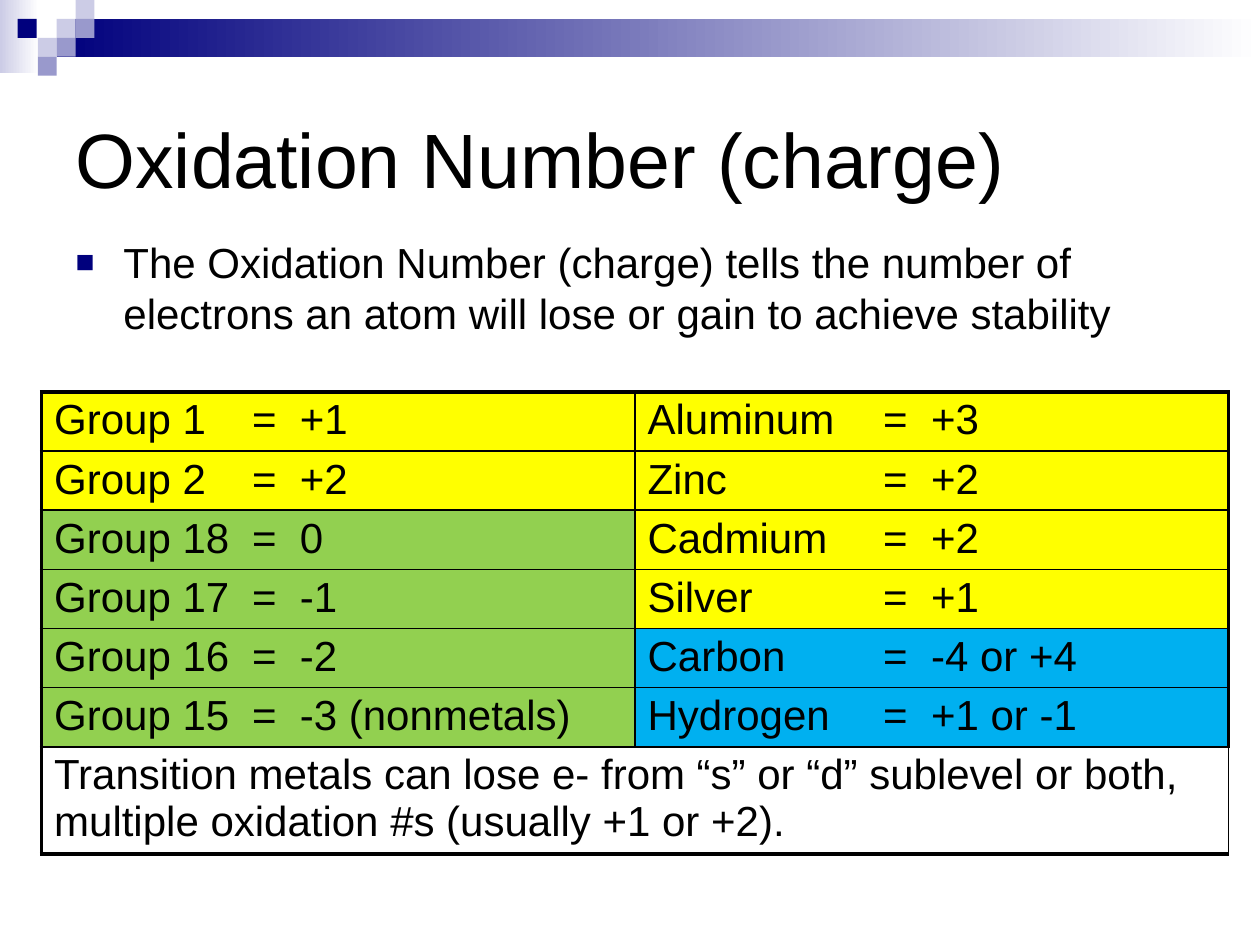
import pptx
import pptx.dml.color
import pptx.enum.shapes
import pptx.enum.text
import pptx.oxml.ns
import pptx.util
from lxml import etree

Inches = pptx.util.Inches
Pt = pptx.util.Pt
RGBColor = pptx.dml.color.RGBColor
qn = pptx.oxml.ns.qn
MSO_ANCHOR = pptx.enum.text.MSO_ANCHOR

BLACK = RGBColor(0x00, 0x00, 0x00)
WHITE = RGBColor(0xFF, 0xFF, 0xFF)
NAVY = RGBColor(0x00, 0x00, 0x7D)
LAVENDER = RGBColor(0xCC, 0xCC, 0xE6)
PERIWINKLE = RGBColor(0x99, 0x99, 0xCC)
YELLOW = RGBColor(0xFF, 0xFF, 0x00)
GREEN = RGBColor(0x92, 0xD0, 0x50)
BLUE = RGBColor(0x00, 0xB0, 0xF0)

SQUARE = 0.15
# Left edge, row on the square grid, colour
SQUARES = [
    (0.45, 1, LAVENDER), (0.6, 0, LAVENDER), (0.6, 1, PERIWINKLE),
    (0.3, 2, LAVENDER), (0.14, 1, NAVY), (0.45, 2, PERIWINKLE),
    (0.3, 3, PERIWINKLE),
]

GROUPS = [
    ("Group 1", "+1", YELLOW), ("Group 2", "+2", YELLOW),
    ("Group 18", "0", GREEN), ("Group 17", "-1", GREEN),
    ("Group 16", "-2", GREEN), ("Group 15", "-3 (nonmetals)", GREEN),
]
ELEMENTS = [
    ("Aluminum", "+3", YELLOW), ("Zinc", "+2", YELLOW),
    ("Cadmium", "+2", YELLOW), ("Silver", "+1", YELLOW),
    ("Carbon", "-4 or +4", BLUE), ("Hydrogen", "+1 or -1", BLUE),
]
# Tab stops of the equals sign and of the charge, for each column
TABS = [(1.57, 1.95), (1.87, 2.25)]
FOOTNOTE = ("Transition metals can lose e- from “s” or “d” sublevel or both, "
            "multiple oxidation #s (usually +1 or +2).")


class SlideBuilder:
    font = "Arial"
    title_size = 44
    text_size = 24
    outer_line = 2.25
    inner_line = 1

    def __init__(self, slide):
        self.s = slide

    def style(self, p, size):
        p.font.name = self.font
        p.font.size = Pt(size)
        p.font.color.rgb = BLACK
        p.alignment = pptx.enum.text.PP_ALIGN.LEFT

    def rect(self, left, top, width, height, color, fade=False):
        """Add a borderless rectangle, fading to white at the right if asked."""
        sp = self.s.shapes.add_shape(
            pptx.enum.shapes.MSO_SHAPE.RECTANGLE,
            Inches(left), Inches(top), Inches(width), Inches(height))
        sp.shadow.inherit = False
        sp.line.fill.background()
        if fade:
            sp.fill.gradient()
            sp.fill.gradient_angle = 0
            for stop, stop_color in zip(sp.fill.gradient_stops, (color, WHITE)):
                stop.color.rgb = stop_color
        else:
            sp.fill.solid()
            sp.fill.fore_color.rgb = color

    def placeholder(self, sp, box, text, size, anchor):
        sp.left, sp.top, sp.width, sp.height = map(Inches, box)
        tf = sp.text_frame
        tf.text = text
        tf.word_wrap = True
        tf.auto_size = pptx.enum.text.MSO_AUTO_SIZE.NONE
        tf.vertical_anchor = anchor
        p = tf.paragraphs[0]
        self.style(p, size)
        return p

    def title(self, box, text):
        self.placeholder(self.s.shapes.title, box, text,
                         self.title_size, MSO_ANCHOR.MIDDLE)

    def bullet(self, box, text):
        p = self.placeholder(self.s.placeholders[1], box, text,
                             self.text_size, MSO_ANCHOR.TOP)
        pPr = p._p.get_or_add_pPr()
        pPr.set("marL", str(Inches(0.38)))
        pPr.set("indent", str(Inches(-0.38)))
        color = etree.Element(qn("a:buClr"))
        etree.SubElement(color, qn("a:srgbClr"), val=str(NAVY))
        size = etree.Element(qn("a:buSzPct"), val="75000")
        char = etree.Element(qn("a:buChar"), char="■")
        for position, element in enumerate((color, size, char)):
            pPr.insert(position, element)

    def table(self, left, top, col_width, row_heights):
        shape = self.s.shapes.add_table(
            len(row_heights), 2, Inches(left), Inches(top),
            Inches(2 * col_width), Inches(sum(row_heights)))
        table = shape.table
        table.first_row = table.horz_banding = False
        for column in table.columns:
            column.width = Inches(col_width)
        for row, height in zip(table.rows, row_heights):
            row.height = Inches(height)
        last = len(row_heights) - 1
        for r in range(last + 1):
            for c in range(2):
                self.borders(table.cell(r, c), L=c == 0, R=c == 1,
                             T=r == 0, B=r == last)
        return table

    def borders(self, cell, **outer):
        """Draw the four sides, heavier where a side is on the outside."""
        tcPr = cell._tc.get_or_add_tcPr()
        for side, is_outer in outer.items():
            width = self.outer_line if is_outer else self.inner_line
            ln = etree.SubElement(tcPr, qn("a:ln" + side), w=str(Pt(width)))
            fill = etree.SubElement(ln, qn("a:solidFill"))
            etree.SubElement(fill, qn("a:srgbClr"), val=str(BLACK))

    def cell(self, cell, text, color=None, tabs=()):
        cell.margin_top = cell.margin_bottom = Inches(0.04)
        if color is None:
            cell.fill.background()
        else:
            cell.fill.solid()
            cell.fill.fore_color.rgb = color
        cell.text_frame.text = text
        p = cell.text_frame.paragraphs[0]
        self.style(p, self.text_size)
        if tabs:
            tab_list = etree.Element(qn("a:tabLst"))
            for tab in tabs:
                etree.SubElement(tab_list, qn("a:tab"),
                                 pos=str(Inches(tab)), algn="l")
            pPr = p._p.get_or_add_pPr()
            pPr.insert(0, tab_list)


def main():
    prs = pptx.Presentation()
    prs.slide_width, prs.slide_height = Inches(10), Inches(7.5)
    b = SlideBuilder(prs.slides.add_slide(prs.slide_layouts[1]))

    b.rect(0, 0, 0.31, 0.58, LAVENDER, fade=True)
    b.rect(0.45, SQUARE, 9.55, 2 * SQUARE, NAVY, fade=True)
    for left, row, color in SQUARES:
        b.rect(left, row * SQUARE, SQUARE, SQUARE, color)

    b.title((0.5, 0.5, 9, 1.5), "Oxidation Number (charge)")
    b.bullet((0.5, 1.83, 8.92, 1.25),
             "The Oxidation Number (charge) tells the number of electrons "
             "an atom will lose or gain to achieve stability")

    table = b.table(0.33, 3.11, 4.71, [0.47] * len(GROUPS) + [0.85])
    for c, (entries, tabs) in enumerate(zip((GROUPS, ELEMENTS), TABS)):
        for r, (name, charge, color) in enumerate(entries):
            b.cell(table.cell(r, c), f"{name}\t=\t{charge}", color, tabs)
    footer = table.cell(len(GROUPS), 0)
    footer.merge(table.cell(len(GROUPS), 1))
    b.cell(footer, FOOTNOTE)

    prs.save("out.pptx")


if __name__ == "__main__":
    main()
